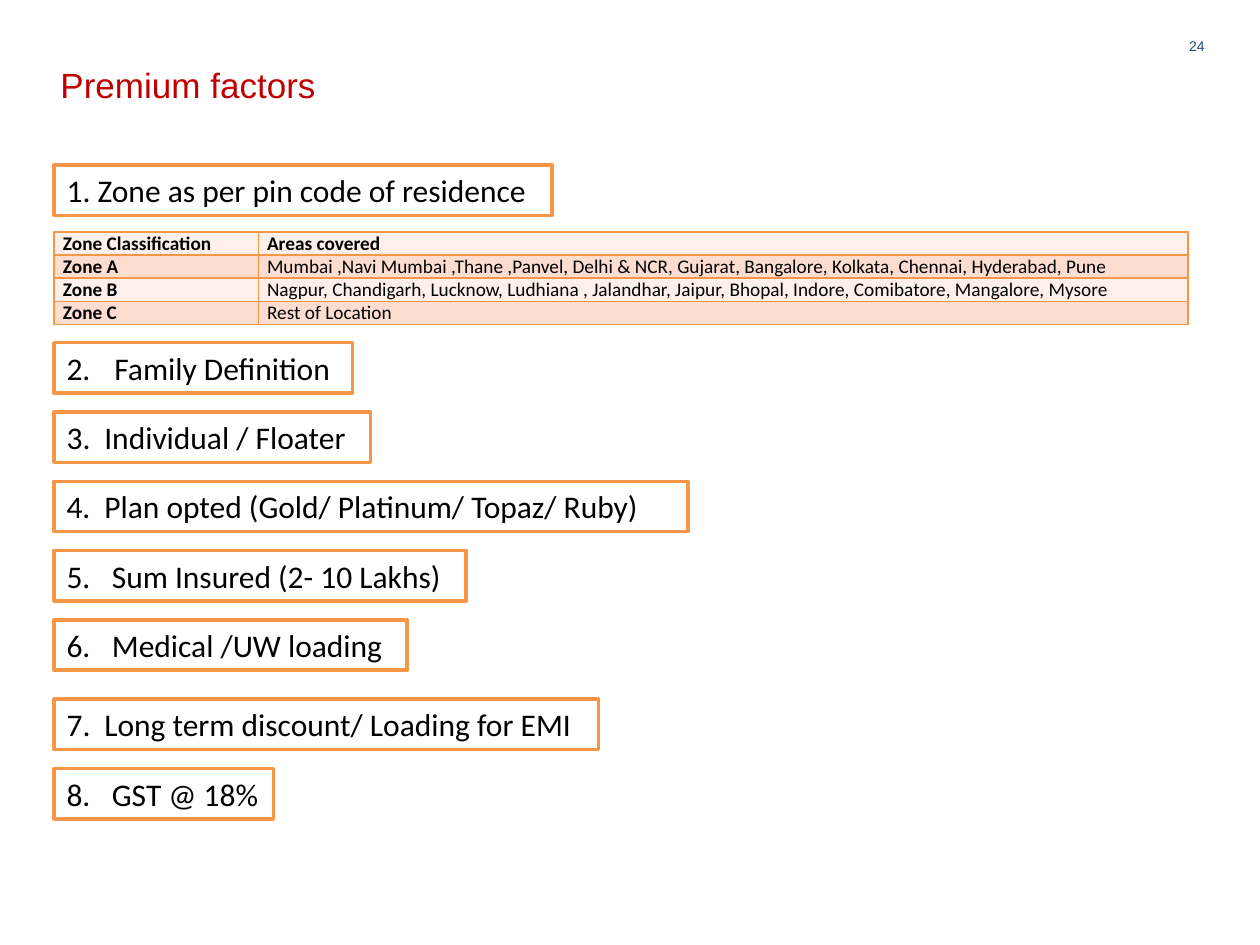
from dataclasses import dataclass

import pptx
import pptx.dml.color
import pptx.enum.shapes
import pptx.enum.text
import pptx.oxml
import pptx.oxml.ns
import pptx.util
from pptx.util import Inches


@dataclass(frozen=True)
class Theme:
    heading_font: str = "Arial"
    body_font: str = "Calibri"
    title: str = "C00000"
    number: str = "1F497D"
    text: str = "000000"
    accent: str = "F79646"
    paper: str = "FFFFFF"
    bands: tuple = ("FDEFE9", "FCDDCF")
    title_size: int = 20
    factor_size: int = 18
    table_size: int = 11
    number_size: int = 8


THEME = Theme()
LEFT = 0.43
FACTOR_HEIGHT = 0.4
FACTOR_PITCH = 0.55

ZONES = [
    ("Zone Classification", "Areas covered"),
    ("Zone A", "Mumbai ,Navi Mumbai ,Thane ,Panvel, Delhi & NCR, Gujarat, "
               "Bangalore, Kolkata, Chennai, Hyderabad, Pune"),
    ("Zone B", "Nagpur, Chandigarh, Lucknow, Ludhiana , Jalandhar, Jaipur, "
               "Bhopal, Indore, Comibatore, Mangalore, Mysore"),
    ("Zone C", "Rest of Location"),
]

# Each group: top of its first box, then (text, box width, hanging indent)
FACTOR_GROUPS = [
    (1.31, [("1. Zone as per pin code of residence", 3.95, 0)]),
    (2.72, [
        ("2.\tFamily Definition", 2.37, 0.38),
        ("3.\tIndividual / Floater", 2.51, 0.3),
        ("4.\tPlan opted (Gold/ Platinum/ Topaz/ Ruby)", 5.03, 0.3),
        ("5.\tSum Insured (2- 10 Lakhs)", 3.27, 0.36),
        ("6.\tMedical /UW loading", 2.8, 0.36),
    ]),
    (5.55, [
        ("7.\tLong term discount/ Loading for EMI", 4.32, 0.3),
        ("8.\tGST @ 18%", 1.74, 0.36),
    ]),
]


def rgb(value):
    return pptx.dml.color.RGBColor.from_string(value)


def style(para, font, size, color, bold=False):
    for span in para.runs:
        span.font.name = font
        span.font.size = pptx.util.Pt(size)
        span.font.bold = bold
        span.font.color.rgb = rgb(color)


def set_title(page, text):
    title = page.shapes.title
    title.left, title.top = Inches(0.38), Inches(0.48)
    title.width, title.height = Inches(9.17), Inches(0.57)
    frame = title.text_frame
    frame.text = text
    frame.auto_size = pptx.enum.text.MSO_AUTO_SIZE.NONE
    frame.vertical_anchor = pptx.enum.text.MSO_ANCHOR.TOP
    para = frame.paragraphs[0]
    para.alignment = pptx.enum.text.PP_ALIGN.LEFT
    para.line_spacing = pptx.util.Pt(22)
    style(para, THEME.heading_font, THEME.title_size, THEME.title)


def add_page_number(page, text):
    box = page.shapes.add_textbox(Inches(9.34), Inches(0.3), Inches(0.22), Inches(0.2))
    frame = box.text_frame
    frame.margin_left = frame.margin_right = frame.margin_top = frame.margin_bottom = 0
    frame.word_wrap = True
    frame.text = text
    para = frame.paragraphs[0]
    para.alignment = pptx.enum.text.PP_ALIGN.RIGHT
    style(para, THEME.heading_font, THEME.number_size, THEME.number)


def set_borders(cell):
    properties = cell._tc.get_or_add_tcPr()
    for side in ("lnL", "lnR", "lnT", "lnB"):
        properties.append(pptx.oxml.parse_xml(
            f'<a:{side} {pptx.oxml.ns.nsdecls("a")} w="12700"><a:solidFill>'
            f'<a:srgbClr val="{THEME.accent}"/></a:solidFill></a:{side}>'))


def add_zone_table(page):
    widths, row_height = (1.62, 7.38), 0.18
    table = page.shapes.add_table(
        len(ZONES), len(widths), Inches(LEFT), Inches(1.84),
        Inches(sum(widths)), Inches(row_height * len(ZONES))).table
    for column, width in zip(table.columns, widths):
        column.width = Inches(width)
    for i, texts in enumerate(ZONES):
        table.rows[i].height = Inches(row_height)
        for j, text in enumerate(texts):
            cell = table.cell(i, j)
            cell.margin_left = cell.margin_right = Inches(0.07)
            cell.margin_top = cell.margin_bottom = 0
            cell.text = text
            set_borders(cell)
            cell.fill.solid()
            cell.fill.fore_color.rgb = rgb(THEME.bands[i % 2])
            style(cell.text_frame.paragraphs[0], THEME.body_font,
                  THEME.table_size, THEME.text, bold=i == 0 or j == 0)


def add_factor(page, top, text, width, indent):
    box = page.shapes.add_shape(
        pptx.enum.shapes.MSO_SHAPE.RECTANGLE,
        Inches(LEFT), Inches(top), Inches(width), Inches(FACTOR_HEIGHT))
    box.shadow.inherit = False
    box.fill.solid()
    box.fill.fore_color.rgb = rgb(THEME.paper)
    box.line.color.rgb = rgb(THEME.accent)
    box.line.width = pptx.util.Pt(2)
    frame = box.text_frame
    frame.word_wrap = True
    frame.vertical_anchor = pptx.enum.text.MSO_ANCHOR.TOP
    frame.text = text
    para = frame.paragraphs[0]
    para.alignment = pptx.enum.text.PP_ALIGN.LEFT
    if indent:
        # The tab after the number runs to the hanging indent
        properties = para._p.get_or_add_pPr()
        properties.set("marL", str(Inches(indent)))
        properties.set("indent", str(-Inches(indent)))
    style(para, THEME.body_font, THEME.factor_size, THEME.text)


def main():
    deck = pptx.Presentation()
    deck.slide_width, deck.slide_height = Inches(10), Inches(7.5)
    page = deck.slides.add_slide(deck.slide_layouts.get_by_name("Title Only"))

    # Heading
    set_title(page, "Premium factors")
    add_page_number(page, "24")

    # Zones and their areas
    add_zone_table(page)

    # Numbered factors
    for first_top, factors in FACTOR_GROUPS:
        for i, (text, width, indent) in enumerate(factors):
            add_factor(page, first_top + i * FACTOR_PITCH, text, width, indent)

    deck.save("out.pptx")


if __name__ == "__main__":
    main()
